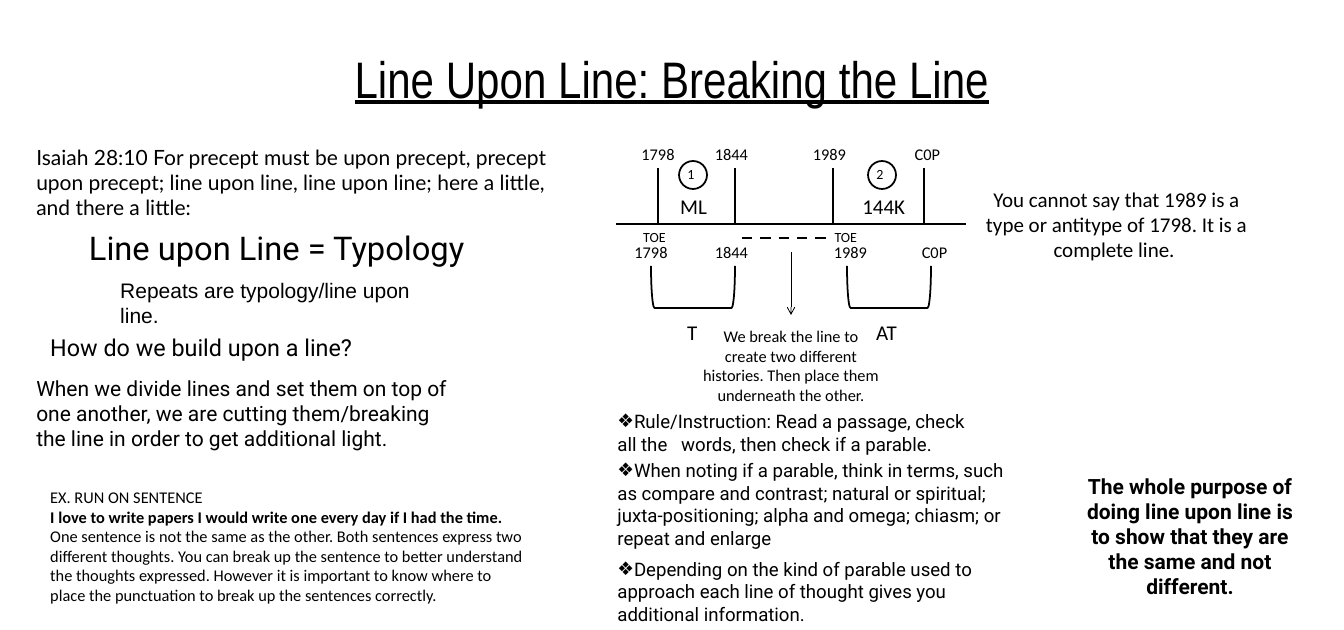
from lxml.etree import SubElement
from pptx import Presentation
from pptx.dml.color import RGBColor
from pptx.enum.dml import MSO_LINE
from pptx.enum.shapes import MSO_CONNECTOR, MSO_SHAPE
from pptx.enum.text import MSO_ANCHOR, MSO_AUTO_SIZE, PP_ALIGN
from pptx.oxml.ns import qn
from pptx.util import Pt

INK = "000000"
LEFT, CENTER = PP_ALIGN.LEFT, PP_ALIGN.CENTER
AXIS_Y = 192


def color(target, value):
    target.rgb = RGBColor.from_string(value)


def place(shape, left, top, width, height):
    shape.left, shape.top = Pt(left), Pt(top)
    shape.width, shape.height = Pt(width), Pt(height)


def add_run(paragraph, text, font, size, bold=False):
    run = paragraph.add_run()
    run.text = text
    run.font.name, run.font.size, run.font.bold = font, Pt(size), bold
    color(run.font.color, INK)
    return run


def add_text(slide, box, lines, font, size, align=LEFT, bold=False, wrap=True):
    """Text box with one paragraph for each (text, bold) pair or plain text."""
    frame = slide.shapes.add_textbox(*map(Pt, box)).text_frame
    frame.word_wrap = wrap
    frame.auto_size = MSO_AUTO_SIZE.SHAPE_TO_FIT_TEXT
    lines = [(lines, bold)] if isinstance(lines, str) else lines
    for number, (text, is_bold) in enumerate(lines):
        paragraph = frame.add_paragraph() if number else frame.paragraphs[0]
        paragraph.alignment = align
        add_run(paragraph, text, font, size, is_bold)


def add_bullet(placeholder, box, text):
    place(placeholder, *box)
    frame = placeholder.text_frame
    frame.auto_size = MSO_AUTO_SIZE.SHAPE_TO_FIT_TEXT
    frame.vertical_anchor = MSO_ANCHOR.TOP
    paragraph = frame.paragraphs[0]
    paragraph.space_before = Pt(0)
    add_run(paragraph, text, "Roboto", 16)
    properties = paragraph._p.get_or_add_pPr()
    properties.set("marL", "0")
    properties.set("indent", "0")
    SubElement(properties, qn("a:buChar")).set("char", "❖")


def add_line(slide, start, end, weight=1.5):
    line = slide.shapes.add_connector(
        MSO_CONNECTOR.STRAIGHT, *map(Pt, start + end))
    line.line.width = Pt(weight)
    color(line.line.color, INK)
    SubElement(line._element.spPr, qn("a:effectLst"))
    return line


def add_outline(slide, kind, box, rotation=0):
    shape = slide.shapes.add_shape(kind, *map(Pt, box))
    shape.shadow.inherit = False
    shape.fill.background()
    shape.line.width = Pt(1.5)
    color(shape.line.color, INK)
    shape.rotation = rotation


def add_title(slide):
    title = slide.shapes.title
    place(title, 57.6, 21.6, 1036.8, 90)
    title.text_frame.vertical_anchor = MSO_ANCHOR.MIDDLE
    paragraph = title.text_frame.paragraphs[0]
    paragraph.alignment = CENTER
    run = add_run(paragraph, "Line Upon Line: Breaking the Line", "Arial Narrow", 44)
    run.font.underline = True


def add_statements(slide):
    add_text(slide, (48, 192, 378, 41), "Line upon Line = Typology", "Roboto", 28, CENTER)
    add_text(slide, (24, 120, 456, 94),
             "Isaiah 28:10 For precept must be upon precept, precept upon precept; "
             "line upon line, line upon line; here a little, and there a little:", "Lato", 18)
    add_text(slide, (96, 234, 294, 29), "Repeats are typology/line upon line.", "Arial", 18)
    add_text(slide, (36, 282, 318, 32), "How do we build upon a line?", "Roboto", 20)
    add_text(slide, (24, 318, 372, 73),
             "When we divide lines and set them on top of one another, we are "
             "cutting them/breaking the line in order to get additional light.", "Roboto", 18)
    add_text(slide, (36, 414, 426, 109), [
        ("EX. RUN ON SENTENCE", False),
        ("I love to write papers I would write one every day if I had the time.", True),
        ("One sentence is not the same as the other. Both sentences express two "
         "different thoughts. You can break up the sentence to better understand the "
         "thoughts expressed. However it is important to know where to place the "
         "punctuation to break up the sentences correctly.", False)], "Calibri", 14)
    add_text(slide, (828, 156, 258, 73),
             "You cannot say that 1989 is a type or antitype of 1798. "
             "It is a complete line. ", "Calibri", 18, CENTER)
    add_text(slide, (918, 402, 204, 117),
             "The whole purpose of doing line upon line is to show that they are "
             "the same and not different.", "Roboto", 18, CENTER, bold=True)


def add_rules(slide):
    rules = [
        ((522, 348, 330, 46),
         "Rule/Instruction: Read a passage, check all the   words, "
         "then check if a parable."),
        ((522, 390, 366, 85),
         "When noting if a parable, think in terms, such as compare and contrast; "
         "natural or spiritual; juxta-positioning; alpha and omega; chiasm; "
         "or repeat and enlarge"),
        ((522, 474.5, 360, 65.5),
         "Depending on the kind of parable used to approach each line of thought "
         "gives you additional information."),
    ]
    bodies = list(slide.placeholders)[1:]
    for body, (box, text) in zip(bodies, rules):
        add_bullet(body, box, text)
    for unused in bodies[len(rules):]:
        unused._element.getparent().remove(unused._element)


def add_timeline(slide):
    # Axis, its four dates, and the gap where it is broken
    add_line(slide, (528, AXIS_Y), (828, AXIS_Y))
    for x in (564, 630, 714, 792):
        add_line(slide, (x, 144), (x, AXIS_Y))
    gap = add_line(slide, (636, 204), (708, 204), 2.25)
    gap.line.dash_style = MSO_LINE.DASH

    # Year labels above and below the axis: year, (left, width) of each
    for year, above, below in (("1798", (534, 60), (528, 60)),
                               ("1844", (594, 66), (594, 66)),
                               ("1989", (678, 66), (696, 66)),
                               ("C0P", (768, 54), (774, 54))):
        for (left, width), top in ((above, 120), (below, 204)):
            add_text(slide, (left, top, width, 24), year, "Calibri", 14, CENTER)
    add_text(slide, (534, AXIS_Y, 54, 22), "TOE", "Calibri", 12, CENTER)
    add_text(slide, (708, AXIS_Y, 34, 22), "TOE", "Calibri", 12, CENTER, wrap=False)

    # The two histories: circled number, name above, bracket and type below
    for number, left, bracket, name, name_box, kind, kind_box in (
            ("1", 582, 576, "ML", (576, 42), "T", (582, 30)),
            ("2", 744, 744, "144K", (732, 60), "AT", (744, 42))):
        add_outline(slide, MSO_SHAPE.OVAL, (left, 138, 24, 24))
        add_text(slide, (left, 138, 24, 22), number, "Calibri", 12)
        add_outline(slide, MSO_SHAPE.RIGHT_BRACKET, (bracket, 210, 36, 72), 90)
        for text, (x, width), top in ((name, name_box, 162), (kind, kind_box, 270)):
            add_text(slide, (x, top, width, 29), text, "Calibri", 18)

    # Arrow from the gap to its explanation
    arrow = add_line(slide, (678, 216), (678, 270), 0.75)
    SubElement(arrow.line._get_or_add_ln(), qn("a:tailEnd")).set("type", "arrow")
    add_text(slide, (594, 276, 168, 75),
             "We break the line to create two different histories. "
             "Then place them underneath the other.", "Calibri", 14, CENTER)


def main():
    deck = Presentation()
    deck.slide_width, deck.slide_height = Pt(1152), Pt(540)
    slide = deck.slides.add_slide(deck.slide_layouts.get_by_name("Comparison"))
    add_title(slide)
    add_statements(slide)
    add_rules(slide)
    add_timeline(slide)
    deck.save("out.pptx")


if __name__ == "__main__":
    main()
